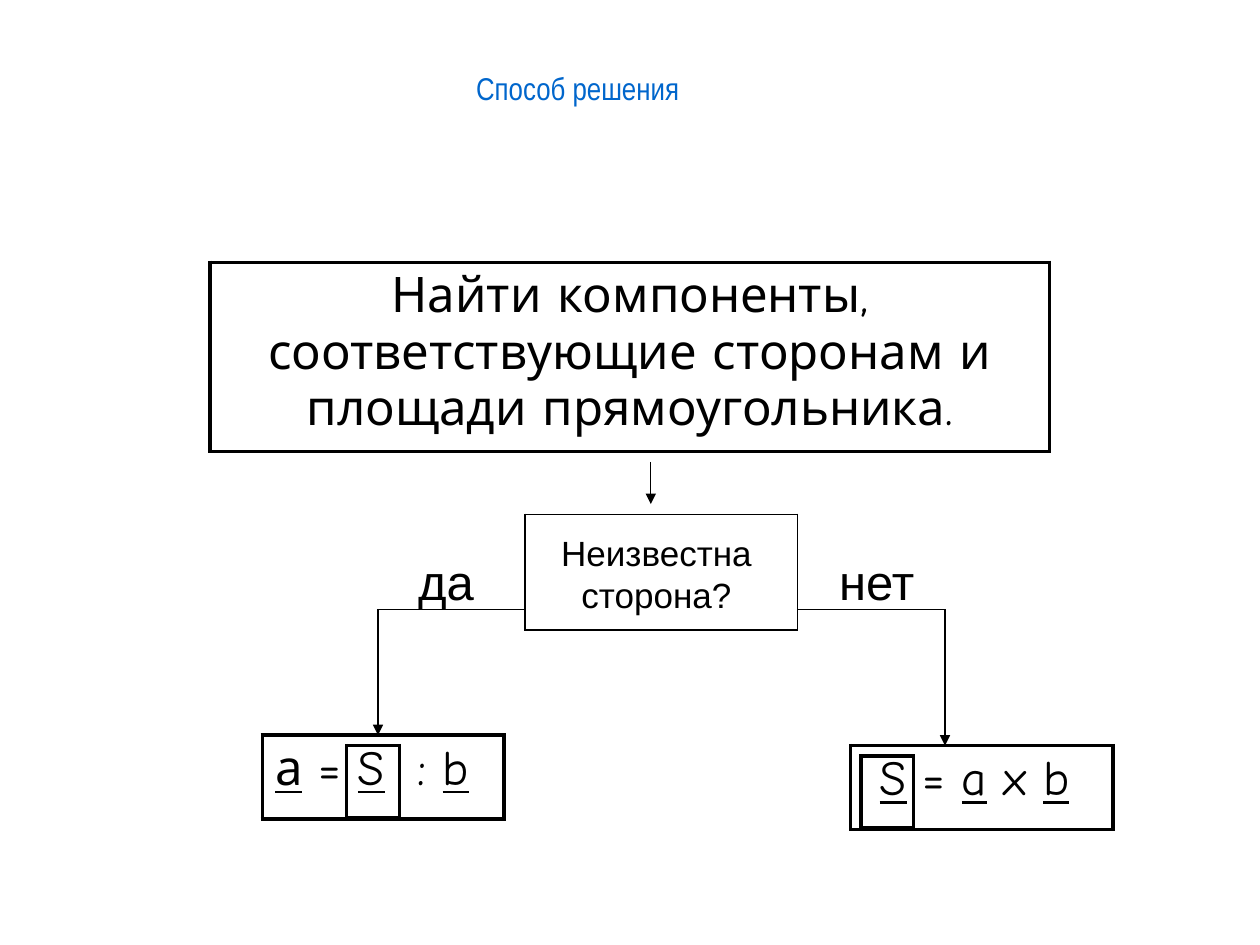
from lxml.etree import SubElement
from pptx import Presentation
from pptx.dml.color import RGBColor
from pptx.enum.shapes import MSO_CONNECTOR as Connector
from pptx.enum.text import MSO_AUTO_SIZE as AutoSize, PP_ALIGN as Align
from pptx.oxml.ns import qn
from pptx.util import Cm, Pt

BLACK = RGBColor(0x00, 0x00, 0x00)
BLUE = RGBColor(0x00, 0x66, 0xCC)
HAND_FONT = "Comic Neue"
THICK, THIN, HAIR = 2.25, 1, 0.75
BRANCH_Y = 12.28
YES_X, NO_X = 7.62, 19.05
YES_Y, NO_Y = 14.82, 15.03


def add_run(para, text, size, font, color=BLACK, underline=False):
    span = para.add_run()
    span.text = text
    span.font.size = Pt(size)
    span.font.name = font
    span.font.color.rgb = color
    span.font.underline = underline


def add_label(page, place, text, size, font="Arial", color=BLACK, grow=True):
    box = page.shapes.add_textbox(*map(Cm, place))
    frame = box.text_frame
    frame.word_wrap = True
    frame.auto_size = AutoSize.SHAPE_TO_FIT_TEXT if grow else AutoSize.NONE
    para = frame.paragraphs[0]
    para.alignment = Align.CENTER
    add_run(para, text, size, font, color)


def add_border(cell, width):
    properties = cell._tc.get_or_add_tcPr()
    for side in ("a:lnL", "a:lnR", "a:lnT", "a:lnB"):
        line = SubElement(properties, qn(side), w=str(Pt(width)))
        fill = SubElement(line, qn("a:solidFill"))
        SubElement(fill, qn("a:srgbClr"), val=str(BLACK))


def add_frame(page, place, width, spans=(), align=Align.LEFT):
    table = page.shapes.add_table(1, 1, *map(Cm, place)).table
    table.first_row = False
    table.horz_banding = False
    cell = table.cell(0, 0)
    add_border(cell, width)
    cell.fill.background()
    para = cell.text_frame.paragraphs[0]
    para.alignment = align
    for text, underline in spans:
        add_run(para, text, 28, HAND_FONT, underline=underline)


def add_line(page, start, end, arrow=False):
    line = page.shapes.add_connector(
        Connector.STRAIGHT, *map(Cm, start), *map(Cm, end))
    line.line.color.rgb = BLACK
    line.line.width = Pt(HAIR)
    if arrow:
        SubElement(line.line._get_or_add_ln(), qn("a:tailEnd"), type="triangle")
    SubElement(line._element.spPr, qn("a:effectLst"))


def add_branch(page, label_place, label, start_x, end_x, end_y):
    add_line(page, (start_x, BRANCH_Y), (end_x, BRANCH_Y))
    add_line(page, (end_x, BRANCH_Y), (end_x, end_y), arrow=True)
    add_label(page, label_place, label, 28)


def add_formula(page, place, spans, area_place):
    add_frame(page, place, THICK, spans)
    add_frame(page, (*area_place, 1.06, 1.45), THICK)


def main():
    deck = Presentation()
    deck.slide_width, deck.slide_height = Cm(25.4), Cm(19.05)
    page = deck.slides.add_slide(deck.slide_layouts[6])

    add_label(page, (2.12, 1.27, 19.05, 2.97), "Способ решения", 18,
              "Arial Narrow", BLUE, grow=False)
    task = "Найти компоненты, соответствующие сторонам и площади прямоугольника."
    add_frame(page, (4.23, 5.29, 16.93, 3.81), THICK, [(task, False)], Align.CENTER)
    add_line(page, (13.12, 9.31), (13.12, 10.16), arrow=True)

    add_label(page, (10.8, 10.58, 4.87, 1.96), "Неизвестна сторона?", 20)
    add_frame(page, (10.58, 10.37, 5.5, 2.33), THIN)
    add_branch(page, (8.04, 11, 1.9, 1.45), "да", 10.58, YES_X, YES_Y)
    add_branch(page, (16.3, 11, 2.75, 1.45), "нет", 16.08, NO_X, NO_Y)

    side = [("а", True), (" = ", False), ("S", True), ("  : ", False), ("b", True)]
    area = [(" ", False), ("S", True), (" = ", False), ("a", True),
            (" x ", False), ("b", True)]
    add_formula(page, (5.29, YES_Y, 4.87, 1.69), side, (6.99, YES_Y + 0.21))
    add_formula(page, (17.15, NO_Y, 5.29, 1.69), area, (17.36, NO_Y + 0.21))

    deck.save("out.pptx")


if __name__ == "__main__":
    main()
